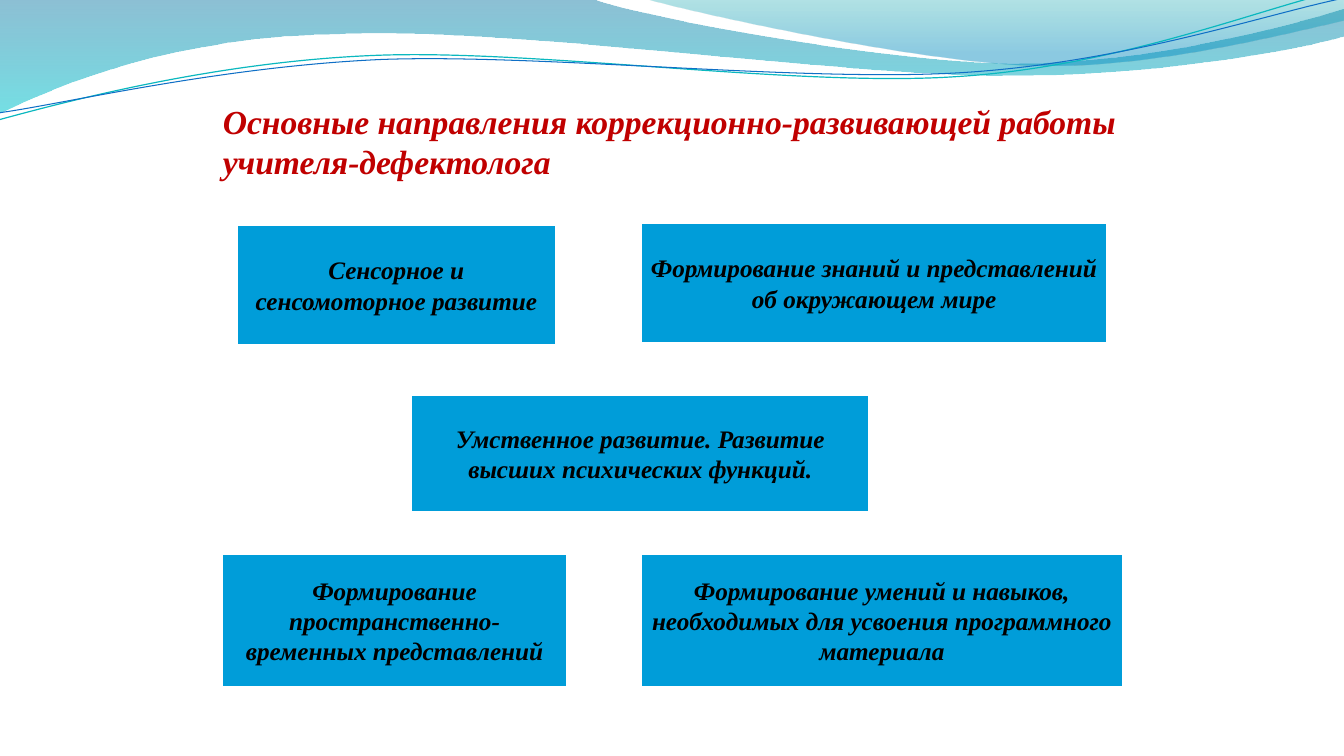
from dataclasses import dataclass

from lxml.etree import SubElement
from pptx import Presentation
from pptx.dml.color import RGBColor
from pptx.enum.shapes import MSO_SHAPE as Preset
from pptx.enum.text import MSO_ANCHOR as Anchor, MSO_AUTO_SIZE as AutoSize, PP_ALIGN as Align
from pptx.oxml.ns import qn
from pptx.util import Cm, Pt


@dataclass(frozen=True)
class Theme:
    font: str = "Times New Roman"
    title_size: float = 24
    box_size: float = 18
    title_color: str = "C00000"
    text_color: str = "000000"
    box_fill: str = "009DD9"
    box_edge: str = "FFFFFF"
    wide_band: tuple = ((0, "0074A1", 45), (1, "00C6CF", 55))
    right_band: tuple = ((0, "00A1A9", 30), (0.8, "008BBF", 45))
    teal_line: str = "0AB8BF"
    blue_line: str = "0F6FC6"


THEME = Theme()
UNITS_PER_CM = 1000

WIDE_BAND = [
    (-0.03, 0),
    (14.91, -0.03),
    (16.1, 0.43, 22.48, 1.6, 25.68, 1.6),
    (28.91, 1.6, 32.46, 0.66, 33.86, 0.23),
    (33.91, 0.91),
    (33.3, 1.12, 29.46, 1.93, 25.25, 1.91),
    (21.06, 1.91, 12.93, 0.71, 8.71, 0.86),
    (4.37, 0.91, 1.55, 2.11, -0.03, 2.87),
]
RIGHT_BAND = [
    (16.23, -0.03),
    (17.25, 0.28, 23.09, 1.57, 26.04, 1.65),
    (28.98, 1.75, 32.56, 0.81, 33.86, 0.53),
    (33.86, 0),
]
TEAL_WAVE = [
    (-0.03, 3.02),
    (1.63, 2.57, 5.36, 1.57, 9.37, 1.4),
    (13.39, 1.22, 20.07, 2.21, 24.13, 1.93),
    (28.19, 1.68, 31.8, 0.2, 33.81, -0.25),
]
BLUE_WAVE = [
    (0, 2.84),
    (1.6, 2.62, 5.54, 1.68, 9.6, 1.5),
    (13.64, 1.35, 20.22, 2.08, 24.26, 1.83),
    (28.4, 1.57, 31.88, 0.36, 33.88, -0.05),
]

TITLE = "Основные направления коррекционно-развивающей работы учителя-дефектолога"
DIRECTIONS = [
    ("Сенсорное и сенсомоторное развитие", 5.94, 5.64, 8.1, 3.08),
    ("Формирование пространственно-временных представлений", 5.56, 13.93, 8.77, 3.4),
    ("Умственное развитие. Развитие высших психических функций.", 10.34, 9.93, 11.6, 3),
    ("Формирование знаний и представлений об окружающем мире", 16.13, 5.59, 11.8, 3.08),
    ("Формирование умений и навыков, необходимых для усвоения программного материала",
     16.13, 13.93, 12.19, 3.4),
]


def units(length):
    return round(length * UNITS_PER_CM)


def bend(line, segment, origin):
    line.tag = qn("a:cubicBezTo")
    for point in list(line):
        line.remove(point)
    for x, y in zip(segment[::2], segment[1::2]):
        point = SubElement(line, qn("a:pt"))
        point.set("x", str(units(x) - origin[0]))
        point.set("y", str(units(y) - origin[1]))


def add_outline(page, segments, closed):
    anchors = [(units(segment[-2]), units(segment[-1])) for segment in segments]
    builder = page.shapes.build_freeform(*anchors[0], scale=Cm(1) / UNITS_PER_CM)
    builder.add_line_segments(anchors[1:], close=closed)
    outline = builder.convert_to_shape()
    outline.shadow.inherit = False
    origin = tuple(min(values) for values in zip(*anchors))
    lines = list(outline.element.spPr.iter(qn("a:lnTo")))
    for line, segment in zip(lines, segments[1:]):
        if len(segment) == 6:
            bend(line, segment, origin)
    return outline


def add_band(page, segments, stops):
    band = add_outline(page, segments, closed=True)
    band.line.fill.background()
    band.fill.gradient()
    band.fill.gradient_angle = 270
    for stop, (position, color, _) in zip(band.fill.gradient_stops, stops):
        stop.position = position
        stop.color.rgb = RGBColor.from_string(color)
    colors = list(band.element.spPr.iter(qn("a:srgbClr")))
    for element, (_, _, opacity) in zip(colors, stops):
        SubElement(element, qn("a:alpha")).set("val", str(opacity * 1000))


def add_wave(page, segments, color, width):
    wave = add_outline(page, segments, closed=False)
    wave.fill.background()
    wave.line.color.rgb = RGBColor.from_string(color)
    wave.line.width = Pt(width)


def write(shape, text, *, size, color, align, anchor):
    frame = shape.text_frame
    frame.word_wrap = True
    frame.auto_size = AutoSize.NONE
    frame.vertical_anchor = anchor
    para = frame.paragraphs[0]
    para.alignment = align
    span = para.add_run()
    span.text = text
    span.font.name = THEME.font
    span.font.size = Pt(size)
    span.font.bold = True
    span.font.italic = True
    span.font.color.rgb = RGBColor.from_string(color)


def set_title(page):
    title = page.shapes.title
    title.left, title.top = Cm(5.36), Cm(2.41)
    title.width, title.height = Cm(23.16), Cm(3.07)
    write(title, TITLE, size=THEME.title_size, color=THEME.title_color,
          align=Align.LEFT, anchor=Anchor.TOP)


def add_direction(page, text, left, top, width, height):
    box = page.shapes.add_shape(Preset.RECTANGLE, Cm(left), Cm(top), Cm(width), Cm(height))
    box.shadow.inherit = False
    box.fill.solid()
    box.fill.fore_color.rgb = RGBColor.from_string(THEME.box_fill)
    box.line.color.rgb = RGBColor.from_string(THEME.box_edge)
    box.line.width = Pt(3)
    write(box, text, size=THEME.box_size, color=THEME.text_color,
          align=Align.CENTER, anchor=Anchor.MIDDLE)


def main():
    deck = Presentation()
    deck.slide_width, deck.slide_height = Cm(33.87), Cm(19.05)
    page = deck.slides.add_slide(deck.slide_layouts.get_by_name("Title Only"))
    add_band(page, WIDE_BAND, THEME.wide_band)
    add_band(page, RIGHT_BAND, THEME.right_band)
    add_wave(page, TEAL_WAVE, THEME.teal_line, 0.85)
    add_wave(page, BLUE_WAVE, THEME.blue_line, 0.75)
    set_title(page)
    for direction in DIRECTIONS:
        add_direction(page, *direction)
    deck.save("out.pptx")


if __name__ == "__main__":
    main()
